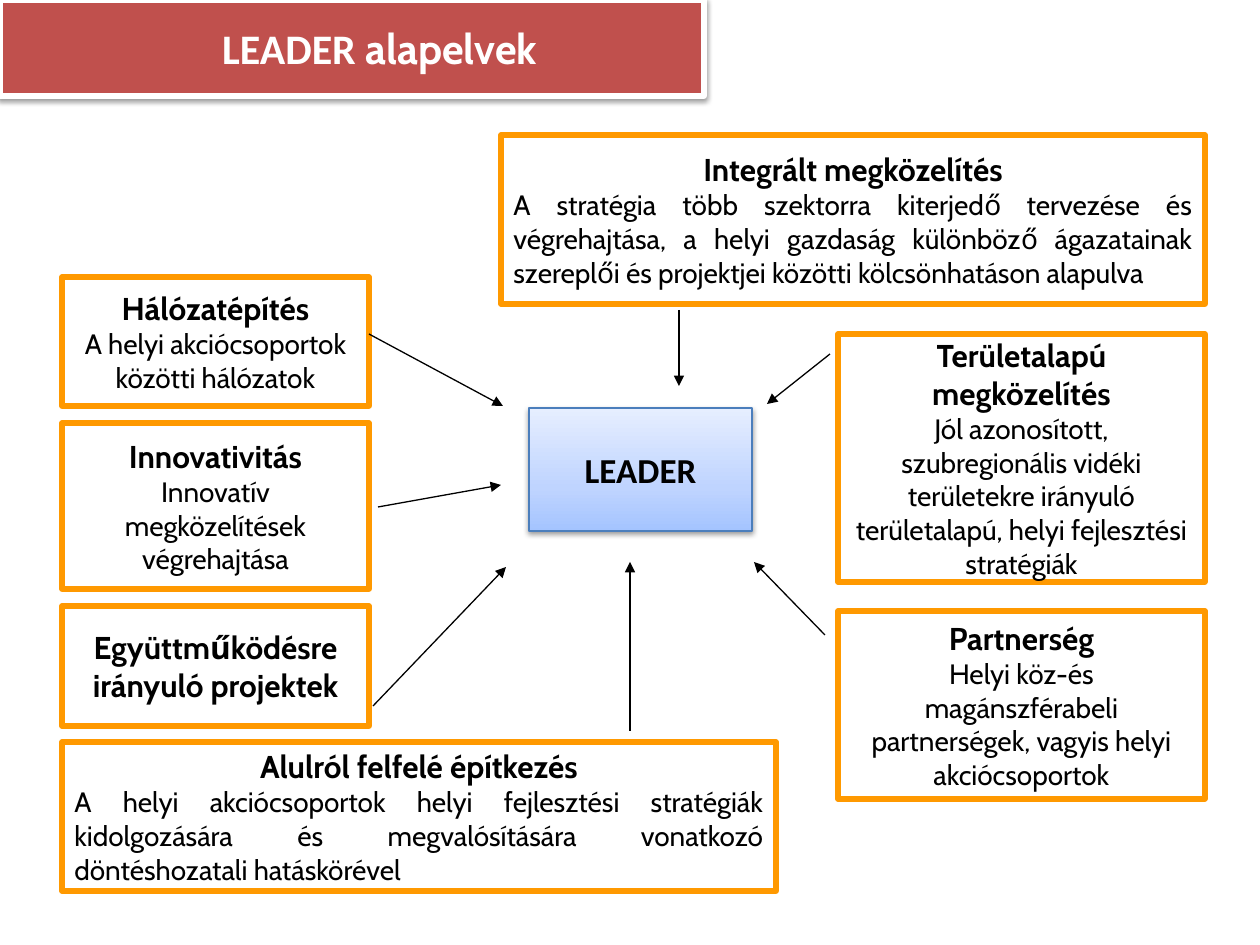
from pptx import Presentation
from pptx.dml.color import RGBColor
from pptx.enum.shapes import MSO_CONNECTOR, MSO_SHAPE
from pptx.enum.text import MSO_ANCHOR, PP_ALIGN
from pptx.oxml import parse_xml
from pptx.oxml.ns import nsdecls, qn
from pptx.oxml.xmlchemy import OxmlElement
from pptx.util import Pt

EMU_PER_PX = 914400 / 126

BLACK = RGBColor(0x00, 0x00, 0x00)
WHITE = RGBColor(0xFF, 0xFF, 0xFF)
RED = RGBColor(0xC0, 0x50, 0x4D)
ORANGE = RGBColor(0xFF, 0x99, 0x00)
BLUE = RGBColor(0x4B, 0x7E, 0xBC)
CENTER_STOPS = (
    (0, RGBColor(0xA4, 0xC4, 0xFF)),
    (35, RGBColor(0xBF, 0xD4, 0xFF)),
    (100, RGBColor(0xE6, 0xEE, 0xFF)),
)

RECTANGLE = MSO_SHAPE.RECTANGLE
STRAIGHT = MSO_CONNECTOR.STRAIGHT
MIDDLE = MSO_ANCHOR.MIDDLE
CENTER = PP_ALIGN.CENTER
JUSTIFY = PP_ALIGN.JUSTIFY

HEADING = {"name": "Cabin", "size": Pt(18), "bold": True}
BODY = {"name": "Cabin", "size": Pt(16), "bold": False}
TITLE_START = {"name": "Calibri", "size": Pt(24), "bold": True}
TITLE_END = {**TITLE_START, "name": "Cabin"}
CENTER_LABEL = {"name": "Calibri", "size": Pt(20), "bold": True}

LEFT_X, LEFT_WIDTH = 62, 307
RIGHT_X, RIGHT_WIDTH = 838, 367

# Place, heading, body alignment, body paragraphs
PRINCIPLES = (
    ((LEFT_X, 742, 714, 149), "Alulról felfelé építkezés", JUSTIFY,
     ("A helyi akciócsoportok helyi fejlesztési stratégiák kidolgozására "
      "és megvalósítására vonatkozó döntéshozatali hatáskörével",)),
    ((RIGHT_X, 334, RIGHT_WIDTH, 248), "Területalapú megközelítés", CENTER,
     ("Jól azonosított, szubregionális vidéki területekre irányuló",
      "területalapú, helyi fejlesztési stratégiák")),
    ((RIGHT_X, 611, RIGHT_WIDTH, 188), "Partnerség", CENTER,
     ("Helyi köz-és magánszférabeli partnerségek, vagyis helyi akciócsoportok",)),
    ((501, 135, 704, 169), "Integrált megközelítés", JUSTIFY,
     ("A stratégia több szektorra kiterjedő tervezése és végrehajtása, "
      "a helyi gazdaság különböző ágazatainak szereplői és projektjei "
      "közötti kölcsönhatáson alapulva",)),
    ((LEFT_X, 277, LEFT_WIDTH, 129), "Hálózatépítés", CENTER,
     ("A helyi akciócsoportok közötti hálózatok",)),
    ((LEFT_X, 423, LEFT_WIDTH, 166), "Innovativitás", CENTER,
     ("Innovatív megközelítések végrehajtása",)),
    ((LEFT_X, 606, LEFT_WIDTH, 120), "Együttműködésre irányuló projektek",
     CENTER, ()),
)

# Start and end of each arrow towards the centre
ARROWS = (
    ((378, 507), (501, 485)),
    ((679, 310), (679, 386)),
    ((630, 731), (630, 562)),
    ((825, 635), (754, 562)),
    ((830, 354), (767, 404)),
    ((369, 334), (503, 406)),
    ((373, 706), (506, 567)),
)


def px(length):
    return round(length * EMU_PER_PX)


class SlideBuilder:
    def __init__(self, deck):
        self.slide = deck.slides.add_slide(deck.slide_layouts[6])

    def box(self, place, line_color, line_width, paragraphs,
            fill=None, color=BLACK):
        """Each paragraph is (alignment, [(text, font format), ...])."""
        box = self.slide.shapes.add_shape(RECTANGLE, *map(px, place))
        box.shadow.inherit = False
        if fill is None:
            box.fill.background()
        else:
            box.fill.solid()
            box.fill.fore_color.rgb = fill
        box.line.color.rgb = line_color
        box.line.width = Pt(line_width)
        frame = box.text_frame
        frame.word_wrap = True
        frame.vertical_anchor = MIDDLE
        for index, (alignment, spans) in enumerate(paragraphs):
            para = frame.add_paragraph() if index else frame.paragraphs[0]
            para.alignment = alignment
            for text, style in spans:
                span = para.add_run()
                span.text = text
                span.font.color.rgb = color
                for name, value in style.items():
                    setattr(span.font, name, value)
        return box

    def drop_shadow(self, box):
        effects = box._element.spPr.find(qn("a:effectLst"))
        effects.append(parse_xml(
            f'<a:outerShdw {nsdecls("a")} blurRad="40000" dist="20000" '
            'dir="5400000" rotWithShape="0"><a:srgbClr val="000000">'
            '<a:alpha val="38000"/></a:srgbClr></a:outerShdw>'))

    def vertical_gradient(self, box, stops):
        """Stops run from the bottom edge to the top edge."""
        box.fill.gradient()
        box.fill.gradient_angle = 90
        gradient = box._element.spPr.find(qn("a:gradFill"))
        stop_xml = "".join(
            f'<a:gs pos="{percent * 1000}"><a:srgbClr val="{color}"/></a:gs>'
            for percent, color in stops)
        gradient.replace(
            gradient.find(qn("a:gsLst")),
            parse_xml(f'<a:gsLst {nsdecls("a")}>{stop_xml}</a:gsLst>'))

    def arrow(self, start, end):
        arrow = self.slide.shapes.add_connector(
            STRAIGHT, *map(px, (*start, *end)))
        arrow.line.color.rgb = BLACK
        arrow.line.width = Pt(0.75)
        head = OxmlElement("a:tailEnd")
        head.set("type", "triangle")
        arrow.line._get_or_add_ln().append(head)
        arrow._element.spPr.append(OxmlElement("a:effectLst"))


def main():
    deck = Presentation()
    deck.slide_width, deck.slide_height = px(1260), px(945)
    builder = SlideBuilder(deck)

    title = builder.box(
        (0, 0, 704, 96), WHITE, 3,
        [(CENTER, [("LEADER ", TITLE_START), ("alapelvek", TITLE_END)])],
        fill=RED, color=WHITE)
    title.text_frame.margin_left = px(68)
    builder.drop_shadow(title)

    center = builder.box((529, 408, 223, 123), BLUE, 0.75,
                         [(CENTER, [("LEADER", CENTER_LABEL)])])
    builder.vertical_gradient(center, CENTER_STOPS)
    builder.drop_shadow(center)

    for place, heading, alignment, texts in PRINCIPLES:
        body = [(alignment, [(text, BODY)]) for text in texts]
        builder.box(place, ORANGE, 3,
                    [(CENTER, [(heading, HEADING)]), *body])

    for start, end in ARROWS:
        builder.arrow(start, end)

    deck.save("out.pptx")


if __name__ == "__main__":
    main()
